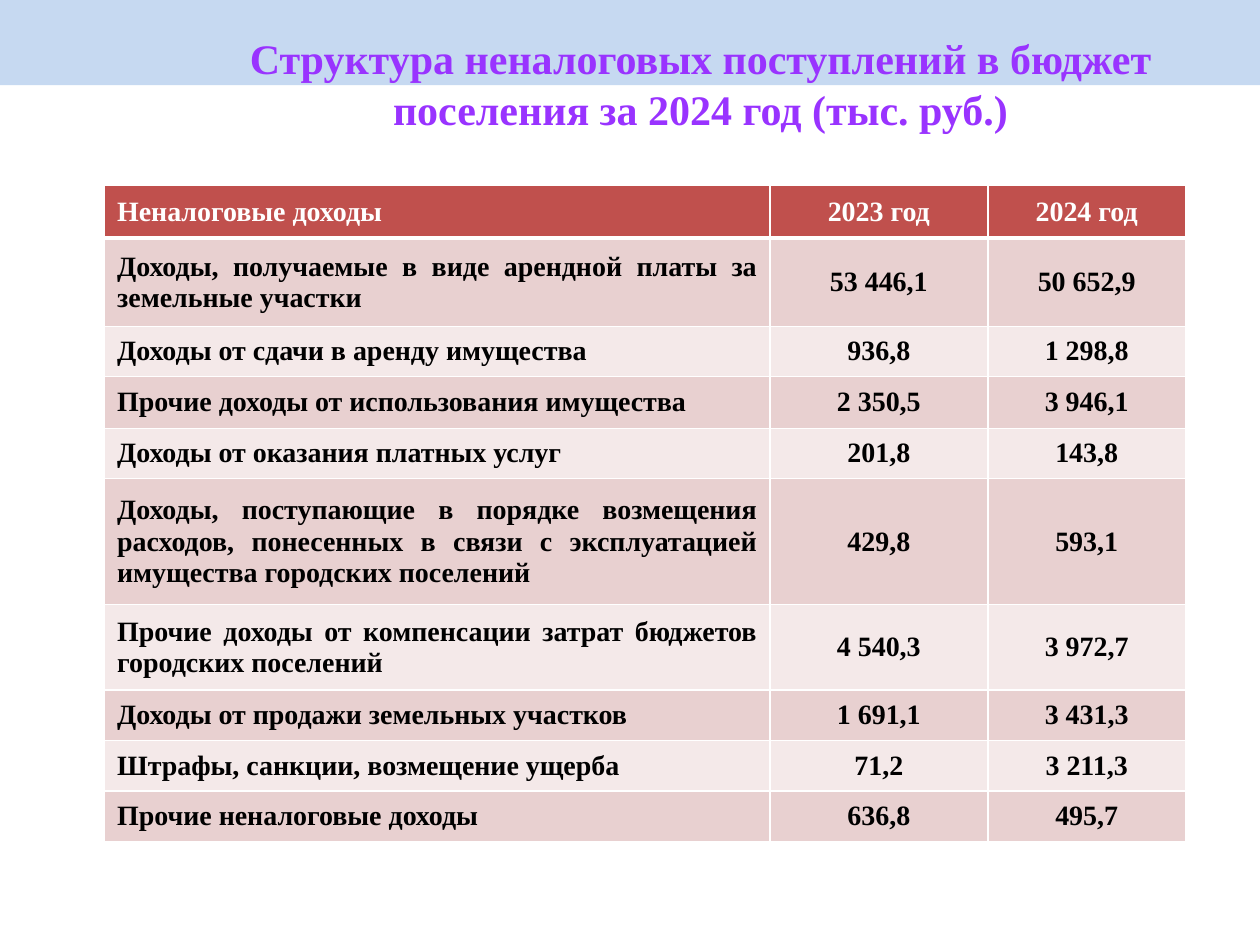
from lxml.etree import SubElement
from pptx import Presentation
from pptx.dml.color import RGBColor
from pptx.enum.shapes import MSO_SHAPE as Shape
from pptx.enum.text import MSO_ANCHOR as Anchor, PP_ALIGN as Align
from pptx.oxml.ns import qn
from pptx.util import Inches, Pt

WIDTH, HEIGHT = Inches(10), Inches(7.5)
FONT = "Times New Roman"
COLORS = {
    "band": "C6D9F1",
    "title": "9933FF",
    "header": "C0504D",
    "odd": "E8D0D0",
    "even": "F4E9E9",
    "white": "FFFFFF",
    "black": "000000",
}
COLUMNS = [5.28, 1.73, 1.57]
ROW_HEIGHTS = [0.42, 0.7, 0.4, 0.41, 0.4, 1, 0.68, 0.4, 0.4, 0.4]
INCOME = [
    ("Неналоговые доходы", "2023 год", "2024 год"),
    ("Доходы, получаемые в виде арендной платы за земельные участки", "53 446,1", "50 652,9"),
    ("Доходы от сдачи в аренду имущества", "936,8", "1 298,8"),
    ("Прочие доходы от использования имущества", "2 350,5", "3 946,1"),
    ("Доходы от оказания платных услуг", "201,8", "143,8"),
    ("Доходы, поступающие в порядке возмещения расходов, понесенных в связи "
     "с эксплуатацией имущества городских поселений", "429,8", "593,1"),
    ("Прочие доходы от компенсации затрат бюджетов городских поселений", "4 540,3", "3 972,7"),
    ("Доходы от продажи земельных участков", "1 691,1", "3 431,3"),
    ("Штрафы, санкции, возмещение ущерба", "71,2", "3 211,3"),
    ("Прочие неналоговые доходы", "636,8", "495,7"),
]


def rgb(name):
    """Return the named palette colour."""
    return RGBColor.from_string(COLORS[name])


def write(frame, text, *, size, color, align, anchor):
    """Write one bold paragraph into a text frame."""
    frame.word_wrap = True
    frame.vertical_anchor = anchor
    paragraph = frame.paragraphs[0]
    paragraph.alignment = align
    run = paragraph.add_run()
    run.text = text
    run.font.name = FONT
    run.font.size = Pt(size)
    run.font.bold = True
    run.font.color.rgb = rgb(color)


def set_borders(cell, bottom):
    """Give a cell white borders, with its own bottom width in points."""
    properties = cell._tc.get_or_add_tcPr()
    for index, (side, width) in enumerate([("L", 1), ("R", 1), ("T", 1), ("B", bottom)]):
        line = SubElement(properties, qn(f"a:ln{side}"), w=str(Pt(width)))
        fill = SubElement(line, qn("a:solidFill"))
        SubElement(fill, qn("a:srgbClr"), val=COLORS["white"])
        properties.insert(index, line)


def add_band(slide, left, top, width, height):
    """Place the pale band behind everything else."""
    band = slide.shapes.add_shape(Shape.RECTANGLE, left, top, width, height)
    band.shadow.inherit = False
    band.fill.solid()
    band.fill.fore_color.rgb = rgb("band")
    band.line.fill.background()
    band.element.getparent().insert(2, band.element)


def add_title(slide, left, top, width, height):
    """Move the title placeholder into its box and fill it."""
    title = slide.shapes.title
    title.left, title.top, title.width, title.height = left, top, width, height
    write(title.text_frame, "Структура неналоговых поступлений в бюджет поселения за 2024 год (тыс. руб.)",
          size=24, color="title", align=Align.CENTER, anchor=Anchor.TOP)


def add_income_table(slide, left, top, width, height):
    """Draw the income table, sharing the box by column and row weights."""
    table = slide.shapes.add_table(len(INCOME), len(COLUMNS), left, top, width, height).table
    for column, share in zip(table.columns, COLUMNS):
        column.width = int(width * share / sum(COLUMNS))
    for row, share in zip(table.rows, ROW_HEIGHTS):
        row.height = int(height * share / sum(ROW_HEIGHTS))
    for r, record in enumerate(INCOME):
        header = r == 0
        shade = "header" if header else ("odd" if r % 2 else "even")
        for c, text in enumerate(record):
            cell = table.cell(r, c)
            cell.fill.solid()
            cell.fill.fore_color.rgb = rgb(shade)
            set_borders(cell, 3 if header else 1)
            label_align = Align.LEFT if header else Align.JUSTIFY
            write(cell.text_frame, text, size=16, color="white" if header else "black",
                  align=Align.CENTER if c else label_align, anchor=Anchor.MIDDLE)
            cell.vertical_anchor = Anchor.MIDDLE


def main():
    """Build the slide and save it."""
    deck = Presentation()
    deck.slide_width, deck.slide_height = WIDTH, HEIGHT
    slide = deck.slides.add_slide(deck.slide_layouts[5])
    add_band(slide, 0, 0, WIDTH, int(HEIGHT * 0.09))
    add_title(slide, Inches(1.12), Inches(0.21), Inches(8.88), Inches(0.43))
    add_income_table(slide, Inches(0.83), Inches(1.47),
                     Inches(sum(COLUMNS)), Inches(sum(ROW_HEIGHTS)))
    deck.save("out.pptx")


if __name__ == "__main__":
    main()
